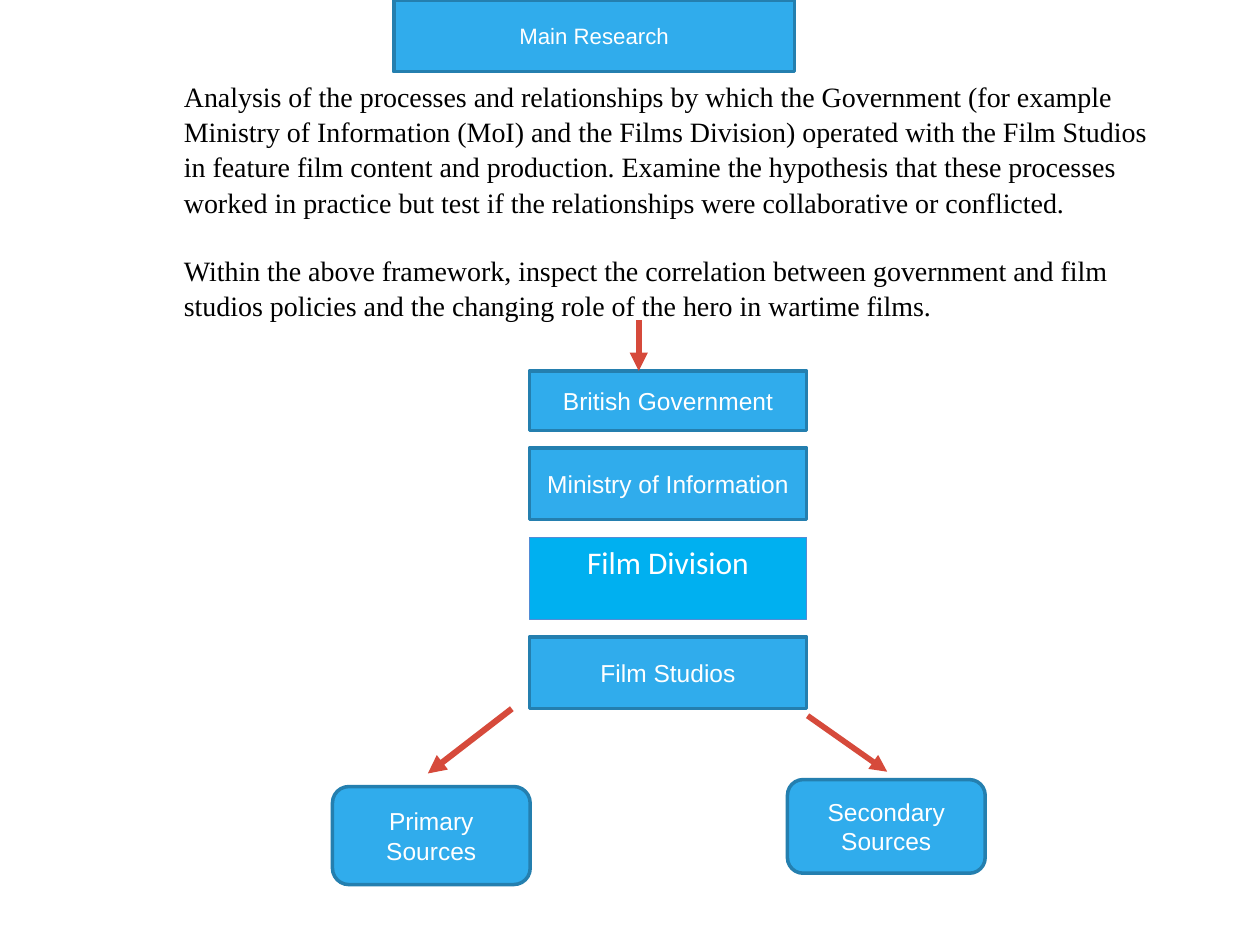
from pptx import Presentation
from pptx.dml.color import RGBColor
from pptx.enum.shapes import MSO_CONNECTOR as Link, MSO_SHAPE as Kind
from pptx.enum.text import MSO_ANCHOR as Anchor, PP_ALIGN as Align
from pptx.oxml.ns import qn
from pptx.util import Pt
from lxml.etree import SubElement

HUES = {
    "box": "30ACEC", "edge": "247FAF",
    "film": "00B0F0", "rim": "538CD5",
    "arrow": "D64A3B", "text": "000000", "label": "FFFFFF",
}
AIM = [
    "Analysis of the processes and relationships by which the Government "
    "(for example Ministry of Information (MoI) and the Films Division) "
    "operated with the Film Studios in feature film content and production. "
    "Examine the hypothesis that these processes worked in practice but test "
    "if the relationships were collaborative or conflicted.",
    "Within the above framework, inspect the correlation between government "
    "and film studios policies and the changing role of the hero in wartime "
    "films.",
]
LEFT, WIDE = 302.5, 158.5


def hue(name):
    return RGBColor.from_string(HUES[name])


def add_run(para, text, size, font, color):
    run = para.add_run()
    run.text = text
    run.font.size = Pt(size)
    run.font.name = font
    run.font.color.rgb = hue(color)


def add_body(slide, texts, x, y, w, h):
    frame = slide.shapes.add_textbox(Pt(x), Pt(y), Pt(w), Pt(h)).text_frame
    frame.word_wrap = True
    for i, text in enumerate(texts):
        para = frame.add_paragraph() if i else frame.paragraphs[0]
        para.line_spacing = 1.05
        para.space_before = Pt(19 if i else 0)
        add_run(para, text, 16, "Times New Roman", "text")


def add_box(slide, text, x, y, w, h, kind=Kind.RECTANGLE, size=14,
            font="Arial", fill="box", edge="edge", line=2,
            anchor=Anchor.MIDDLE):
    box = slide.shapes.add_shape(kind, Pt(x), Pt(y), Pt(w), Pt(h))
    box.shadow.inherit = False
    box.fill.solid()
    box.fill.fore_color.rgb = hue(fill)
    box.line.color.rgb = hue(edge)
    box.line.width = Pt(line)
    frame = box.text_frame
    frame.word_wrap = True
    frame.vertical_anchor = anchor
    para = frame.paragraphs[0]
    para.alignment = Align.CENTER
    add_run(para, text, size, font, "label")


def add_arrow(slide, x1, y1, x2, y2, width=3.5):
    arrow = slide.shapes.add_connector(
        Link.STRAIGHT, Pt(x1), Pt(y1), Pt(x2), Pt(y2))
    arrow.line.color.rgb = hue("arrow")
    arrow.line.width = Pt(width)
    SubElement(arrow.line._get_or_add_ln(), qn("a:tailEnd"), type="triangle")
    SubElement(arrow._element.spPr, qn("a:effectLst"))


def main():
    deck = Presentation()
    deck.slide_width, deck.slide_height = Pt(720), Pt(540)
    slide = deck.slides.add_slide(deck.slide_layouts[6])

    add_body(slide, AIM, 98, 41, 569, 163)
    add_box(slide, "Main Research", 225, 0, 229, 41, size=12.7)

    add_box(slide, "Film Division", LEFT, 307, WIDE, 47, size=18,
            font="Calibri", fill="film", edge="rim", line=0.75,
            anchor=Anchor.TOP)
    for text, y, h in [("British Government", 212, 34),
                       ("Ministry of Information", 256, 41),
                       ("Film Studios", 364, 41)]:
        add_box(slide, text, LEFT, y, WIDE, h)

    for text, x, y, h in [("Primary Sources", 190, 449.5, 56),
                          ("Secondary Sources", 450, 445.5, 53.5)]:
        add_box(slide, text, x, y, 113, h, kind=Kind.ROUNDED_RECTANGLE)

    add_arrow(slide, 365, 183, 365, 212)
    add_arrow(slide, 292.5, 405, 244.5, 442)
    add_arrow(slide, 461.5, 409, 507, 441, width=3.25)

    deck.save("out.pptx")


if __name__ == "__main__":
    main()
